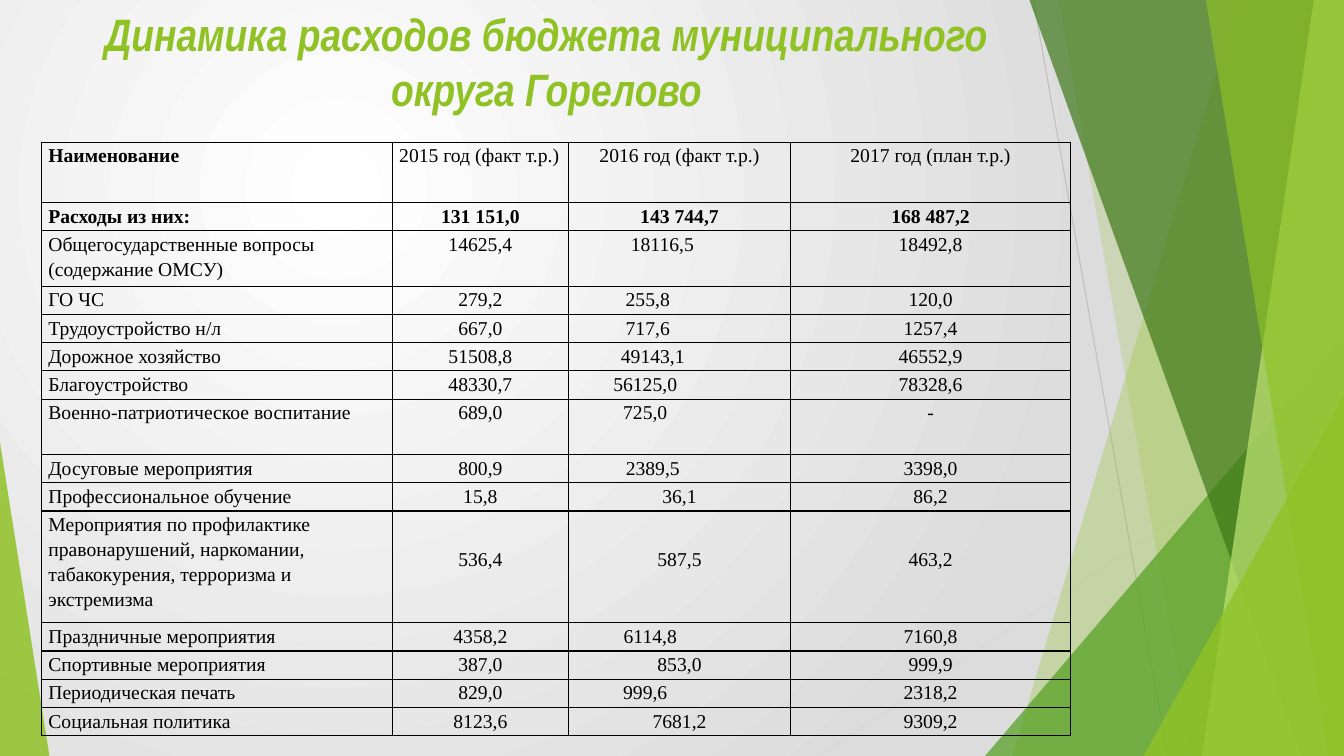
from lxml import etree
from pptx import Presentation
from pptx import util as u
from pptx.dml.color import RGBColor
from pptx.enum import shapes, text
from pptx.oxml import ns, parse_xml

LIME = RGBColor(0x90, 0xC2, 0x26)
LEAF = RGBColor(0x54, 0xA0, 0x21)
FOREST = RGBColor(0x3F, 0x78, 0x19)
PALE = RGBColor(0xC0, 0xE4, 0x74)
BLACK = RGBColor(0, 0, 0)
WHITE = RGBColor(0xFF, 0xFF, 0xFF)
SILVER = RGBColor(0xDC, 0xDC, 0xDC)
GREY = RGBColor(0xBF, 0xBF, 0xBF)
LIGHT_GREY = RGBColor(0xD9, 0xD9, 0xD9)
WIDTH, HEIGHT = 13.33, 7.5
LEFT, CENTER = text.PP_ALIGN.LEFT, text.PP_ALIGN.CENTER

COLUMNS = [3.48, 1.75, 2.2, 2.78]
HEADER = ["Наименование", "2015 год (факт т.р.)", "2016 год (факт т.р.)", "2017 год (план т.р.)"]
EXPENSES = [
    ("Расходы из них:", "131 151,0", "143 744,7", "168 487,2"),
    ("Общегосударственные вопросы (содержание ОМСУ)", "14625,4", "18116,5", "18492,8"),
    ("ГО ЧС", "279,2", "255,8", "120,0"),
    ("Трудоустройство н/л", "667,0", "717,6", "1257,4"),
    ("Дорожное хозяйство", "51508,8", "49143,1", "46552,9"),
    ("Благоустройство", "48330,7", "56125,0", "78328,6"),
    ("Военно-патриотическое воспитание", "689,0", "725,0", "-"),
    ("Досуговые мероприятия", "800,9", "2389,5", "3398,0"),
    ("Профессиональное обучение", "15,8", "36,1", "86,2"),
    ("Мероприятия по профилактике правонарушений, наркомании, "
     "табакокурения, терроризма и экстремизма", "536,4", "587,5", "463,2"),
    ("Праздничные мероприятия", "4358,2", "6114,8", "7160,8"),
    ("Спортивные мероприятия", "387,0", "853,0", "999,9"),
    ("Периодическая печать", "829,0", "999,6", "2318,2"),
    ("Социальная политика", "8123,6", "7681,2", "9309,2"),
]
ROW_HEIGHT = 0.28
TALL_ROWS = {0: 0.6, 2: 0.55, 7: 0.55, 10: 1.11}
PREVENTION_ROW = 10
SHIFTS_2016 = {2: 0.34, 3: 0.63, 4: 0.63, 5: 0.53, 6: 0.68, 7: 0.68, 8: 0.53, 11: 0.58, 13: 0.68}


def write(frame, words, font="Times New Roman", size=14, color=BLACK, bold=False,
          italic=False, align=LEFT, spacing=1.0, after=0):
    para = frame.paragraphs[0]
    para.alignment = align
    para.line_spacing = spacing
    para.space_after = u.Pt(after)
    span = para.add_run()
    span.text = words
    span.font.name = font
    span.font.size = u.Pt(size)
    span.font.color.rgb = color
    span.font.bold = bold
    span.font.italic = italic


class Slide:
    def __init__(self, deck):
        self.page = deck.slides.add_slide(deck.slide_layouts[6])
        self.shapes = self.page.shapes

    def background(self, center, edge):
        fill = self.page.background.fill
        fill.gradient()
        for stop, color, position in zip(fill.gradient_stops, (center, edge), (0, 1)):
            stop.color.rgb = color
            stop.position = position
        direction = next(self.page.background._cSld.iter(ns.qn("a:lin")))
        direction.getparent().replace(direction, parse_xml(
            f'<a:path {ns.nsdecls("a")} path="circle">'
            '<a:fillToRect l="50000" t="50000" r="100000" b="100000"/></a:path>'))

    def line(self, start, end, color):
        line = self.shapes.add_connector(
            shapes.MSO_CONNECTOR.STRAIGHT, *(u.Inches(n) for n in start + end))
        line.line.color.rgb = color
        line.line.width = u.Pt(0.75)
        etree.SubElement(line._element.spPr, ns.qn("a:effectLst"))

    def paint(self, shape, color, opacity):
        shape.shadow.inherit = False
        shape.line.fill.background()
        shape.fill.solid()
        shape.fill.fore_color.rgb = color
        tint = next(shape._element.spPr.iter(ns.qn("a:srgbClr")))
        etree.SubElement(tint, ns.qn("a:alpha")).set("val", str(opacity * 1000))

    def blade(self, top, bottom, color, opacity):
        points = [(u.Inches(x), u.Inches(y)) for x, y in
                  ((top, 0), (WIDTH, 0), (WIDTH, HEIGHT), (bottom, HEIGHT))]
        outline = self.shapes.build_freeform(*points[0])
        outline.add_line_segments(points[1:], close=True)
        self.paint(outline.convert_to_shape(), color, opacity)

    def triangle(self, left, top, width, apex, color, opacity):
        shape = self.shapes.add_shape(
            shapes.MSO_SHAPE.ISOSCELES_TRIANGLE, u.Inches(left), u.Inches(top),
            u.Inches(width), u.Inches(HEIGHT - top))
        shape.adjustments[0] = apex
        self.paint(shape, color, opacity)

    def title(self, words, *place):
        box = self.shapes.add_textbox(*(u.Inches(n) for n in place))
        frame = box.text_frame
        frame.word_wrap = True
        frame.vertical_anchor = text.MSO_ANCHOR.MIDDLE
        write(frame, words, font="Arial Narrow", size=32.4, color=LIME,
              bold=True, italic=True, align=CENTER)

    def cell(self, cell, words, shift=0, drop=0, **style):
        cell.margin_left = u.Inches(0.07)
        cell.margin_right = u.Inches(0.07 + shift)
        cell.margin_top = u.Inches(drop)
        cell.margin_bottom = 0
        properties = cell._tc.get_or_add_tcPr()
        for side in "LRTB":
            properties.append(parse_xml(
                f'<a:ln{side} {ns.nsdecls("a")} w="12700"><a:solidFill>'
                f'<a:srgbClr val="{BLACK}"/></a:solidFill></a:ln{side}>'))
        cell.fill.background()
        write(cell.text_frame, words, spacing=1.15, **style)

    def table(self, left, top, rows):
        heights = [TALL_ROWS.get(r, ROW_HEIGHT) for r in range(len(rows))]
        table = self.shapes.add_table(
            len(rows), len(COLUMNS), u.Inches(left), u.Inches(top),
            u.Inches(sum(COLUMNS)), u.Inches(sum(heights))).table
        table.first_row = table.horz_banding = False
        for column, width in zip(table.columns, COLUMNS):
            column.width = u.Inches(width)
        for r, values in enumerate(rows):
            table.rows[r].height = u.Inches(heights[r])
            for c, words in enumerate(values):
                self.cell(
                    table.cell(r, c), words,
                    shift=SHIFTS_2016.get(r, 0) if c == 2 else 0,
                    drop=0.35 if r == PREVENTION_ROW and c else 0,
                    bold=r == 1 or (r, c) == (0, 0),
                    align=LEFT if c == 0 or (r, c) == (0, 1) else CENTER,
                    after=0 if r == 0 and c else 10)


def main():
    deck = Presentation()
    deck.slide_width, deck.slide_height = u.Inches(WIDTH), u.Inches(HEIGHT)
    slide = Slide(deck)
    slide.background(WHITE, SILVER)
    slide.line((10.25, 0), (11.58, HEIGHT), GREY)
    slide.line((WIDTH, 4.03), (8.12, HEIGHT), LIGHT_GREY)
    slide.blade(12.28, 10.04, LIME, 30)
    slide.blade(10.5, 11.83, LIME, 20)
    slide.triangle(9.77, 3.33, 3.56, 1, LEAF, 72)
    slide.blade(10.21, 12.91, FOREST, 70)
    slide.blade(13.03, 11.92, PALE, 70)
    slide.blade(11.96, 13.18, LIME, 65)
    slide.triangle(11.34, 3.93, 1.99, 1, LIME, 80)
    slide.triangle(0, 4.39, 0.49, 0, LIME, 85)
    slide.title("Динамика расходов бюджета муниципального округа Горелово", 0.72, 0, 9.4, 1.21)
    slide.table(0.41, 1.41, [HEADER, *EXPENSES])
    deck.save("out.pptx")


if __name__ == "__main__":
    main()
